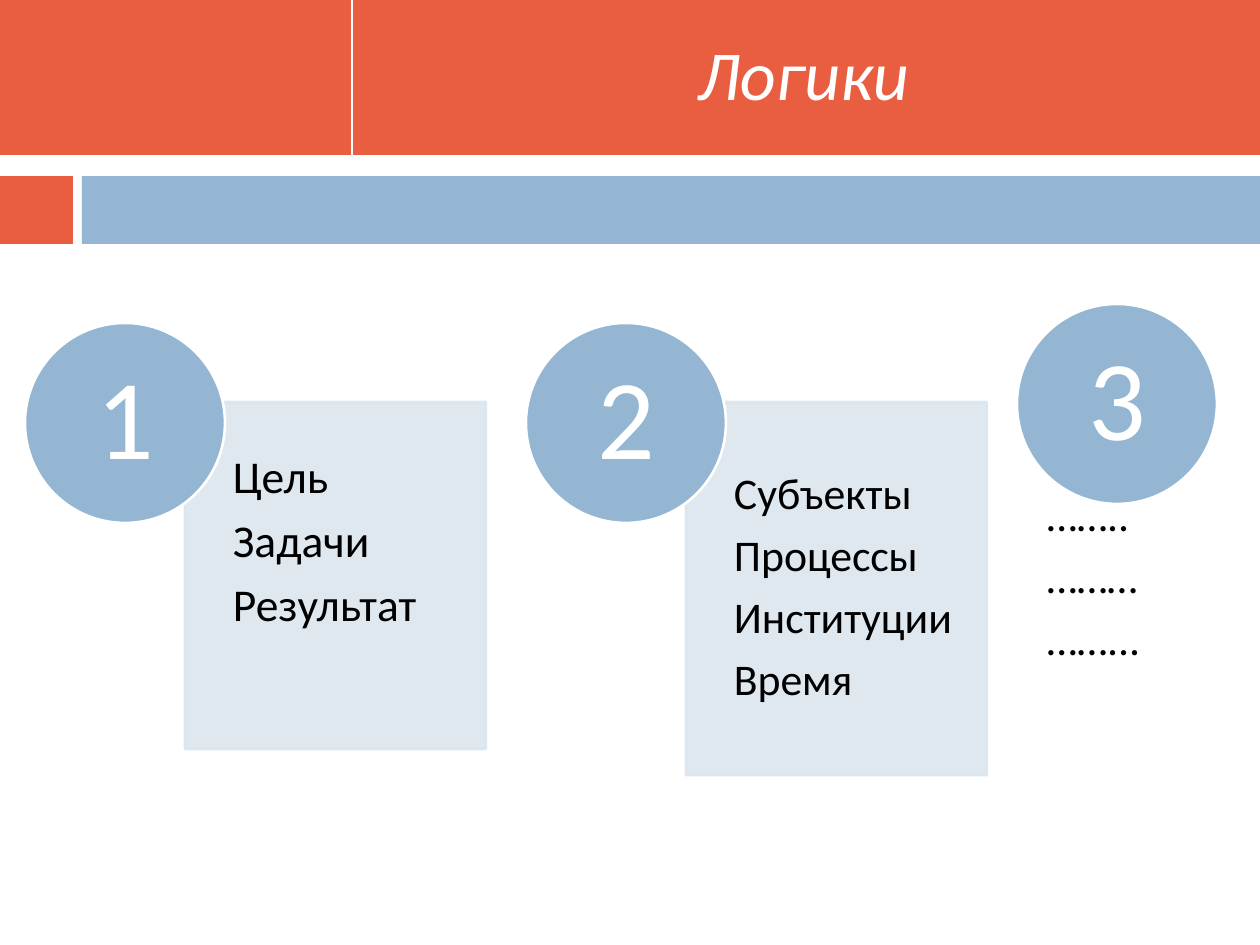
from lxml.etree import SubElement
from pptx import Presentation
from pptx.dml.color import RGBColor
from pptx.enum.shapes import MSO_CONNECTOR, MSO_SHAPE
from pptx.enum.text import MSO_ANCHOR, PP_ALIGN
from pptx.oxml.ns import qn
from pptx.util import Emu, Pt

ORANGE = RGBColor(0xE9, 0x5E, 0x40)
BLUE = RGBColor(0x94, 0xB6, 0xD2)
PALE = RGBColor(0xDC, 0xE5, 0xEE)
WHITE = RGBColor(0xFF, 0xFF, 0xFF)
BLACK = RGBColor(0x00, 0x00, 0x00)
FONT = "Calibri"
SCALE = 914400 / 126


def add_shape(kind, box, fill, line=None):
    shape = slide.shapes.add_shape(kind, *[Emu(round(n * SCALE)) for n in box])
    shape.shadow.inherit = False
    shape.fill.solid()
    shape.fill.fore_color.rgb = fill
    if line is None:
        shape.line.fill.background()
    else:
        shape.line.color.rgb = line
        shape.line.width = Pt(1.5)
    return shape


def write(shape, lines, size, color, align, insets):
    frame = shape.text_frame
    frame.word_wrap = True
    frame.vertical_anchor = MSO_ANCHOR.MIDDLE
    (frame.margin_left, frame.margin_top, frame.margin_right,
     frame.margin_bottom) = [Emu(round(n * SCALE)) for n in insets]
    for index, line in enumerate(lines):
        paragraph = frame.add_paragraph() if index else frame.paragraphs[0]
        paragraph.alignment = align
        paragraph.line_spacing = 0.9
        paragraph.space_after = Pt(8.5)
        run = paragraph.add_run()
        run.text = line
        run.font.size = Pt(size)
        run.font.name = FONT
        run.font.color.rgb = color


presentation = Presentation()
presentation.slide_width = Emu(round(1260 * SCALE))
presentation.slide_height = Emu(round(945 * SCALE))
slide = presentation.slides.add_slide(presentation.slide_layouts[5])

for box, fill in [
    ((0, 0, 1260, 155), ORANGE),
    ((0, 170, 1260, 44), WHITE),
    ((0, 176, 73, 68), ORANGE),
    ((82, 176, 1178, 68), BLUE),
]:
    add_shape(MSO_SHAPE.RECTANGLE, box, fill)

divider = slide.shapes.add_connector(
    MSO_CONNECTOR.STRAIGHT, *[Emu(round(n * SCALE)) for n in (352, 0, 352, 155)])
divider.line.color.rgb = WHITE
divider.line.width = Pt(1.5)
SubElement(divider.element.spPr, qn("a:effectLst"))

title = slide.shapes.title
title.left, title.top, title.width, title.height = [
    Emu(round(n * SCALE)) for n in (362, 4, 898, 136)]
title.element.getparent().append(title.element)
title.text_frame.vertical_anchor = MSO_ANCHOR.MIDDLE
paragraph = title.text_frame.paragraphs[0]
paragraph.alignment = PP_ALIGN.CENTER
run = paragraph.add_run()
run.text = "Логики "
run.font.size = Pt(40)
run.font.name = FONT
run.font.italic = True
run.font.color.rgb = WHITE

for left, height, size, bottom, lines in [
    (185, 347, 26, 90, ["Цель", "Задачи", "Результат"]),
    (686, 373, 25, 24, ["Субъекты", "Процессы", "Институции", "Время"]),
]:
    card = add_shape(MSO_SHAPE.RECTANGLE, (left, 402, 301, height), PALE, PALE)
    for color in card.element.spPr.iter(qn("a:srgbClr")):
        SubElement(color, qn("a:alpha"), val="90000")
    write(card, lines, size, BLACK, PP_ALIGN.LEFT, (48, 24, 24, bottom))

dots = slide.shapes.add_textbox(
    *[Emu(round(n * SCALE)) for n in (1047, 393, 252, 373)])
write(dots, ["……..", "………", "……..."], 25, BLACK, PP_ALIGN.LEFT, (0, 24, 24, 24))

for number, (left, top) in enumerate([(25, 323), (526, 323), (1017, 304)], 1):
    circle = add_shape(MSO_SHAPE.OVAL, (left, top, 200, 200), BLUE, WHITE)
    write(circle, [str(number)], 65, WHITE, PP_ALIGN.CENTER, (0, 0, 0, 0))

presentation.save("out.pptx")
